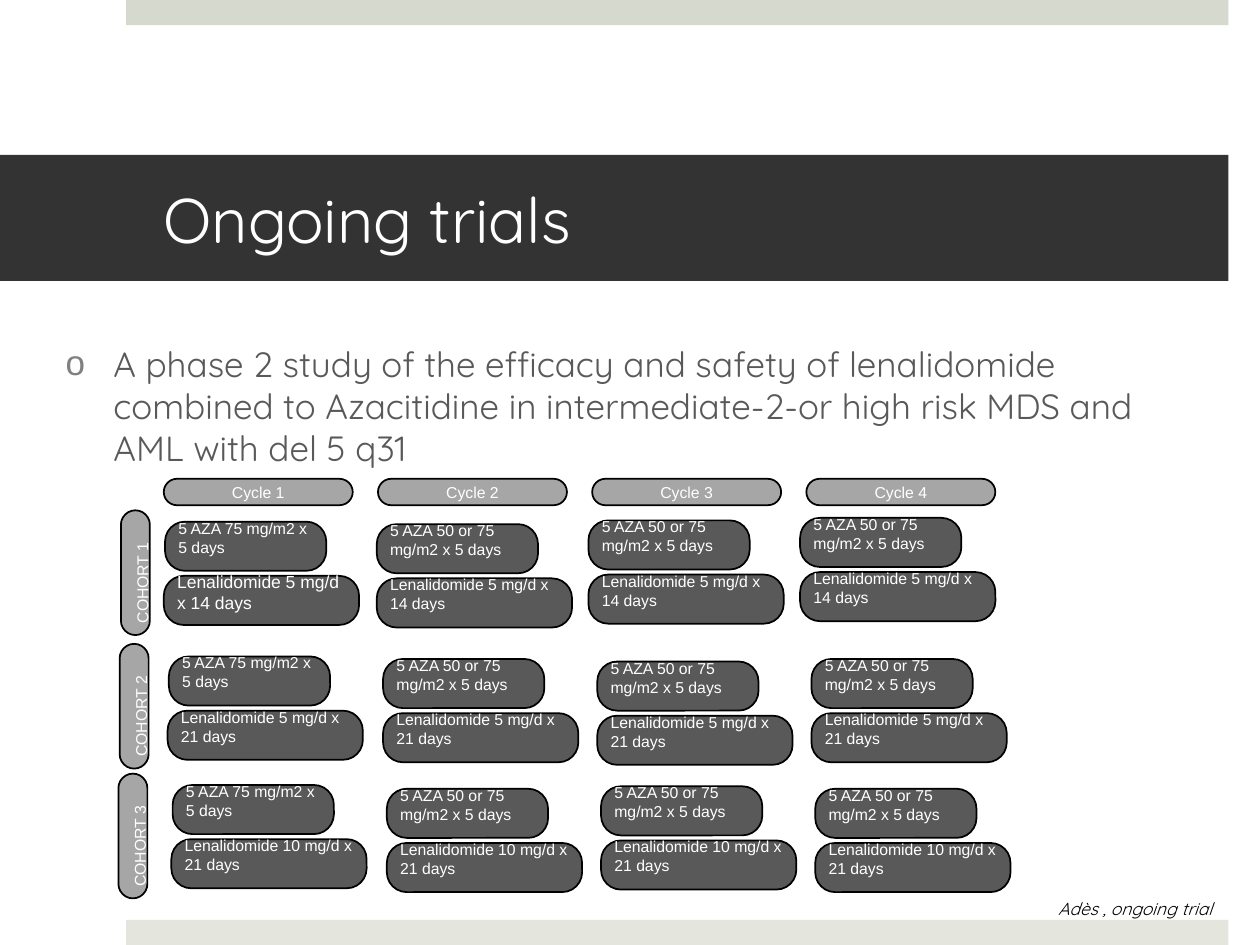
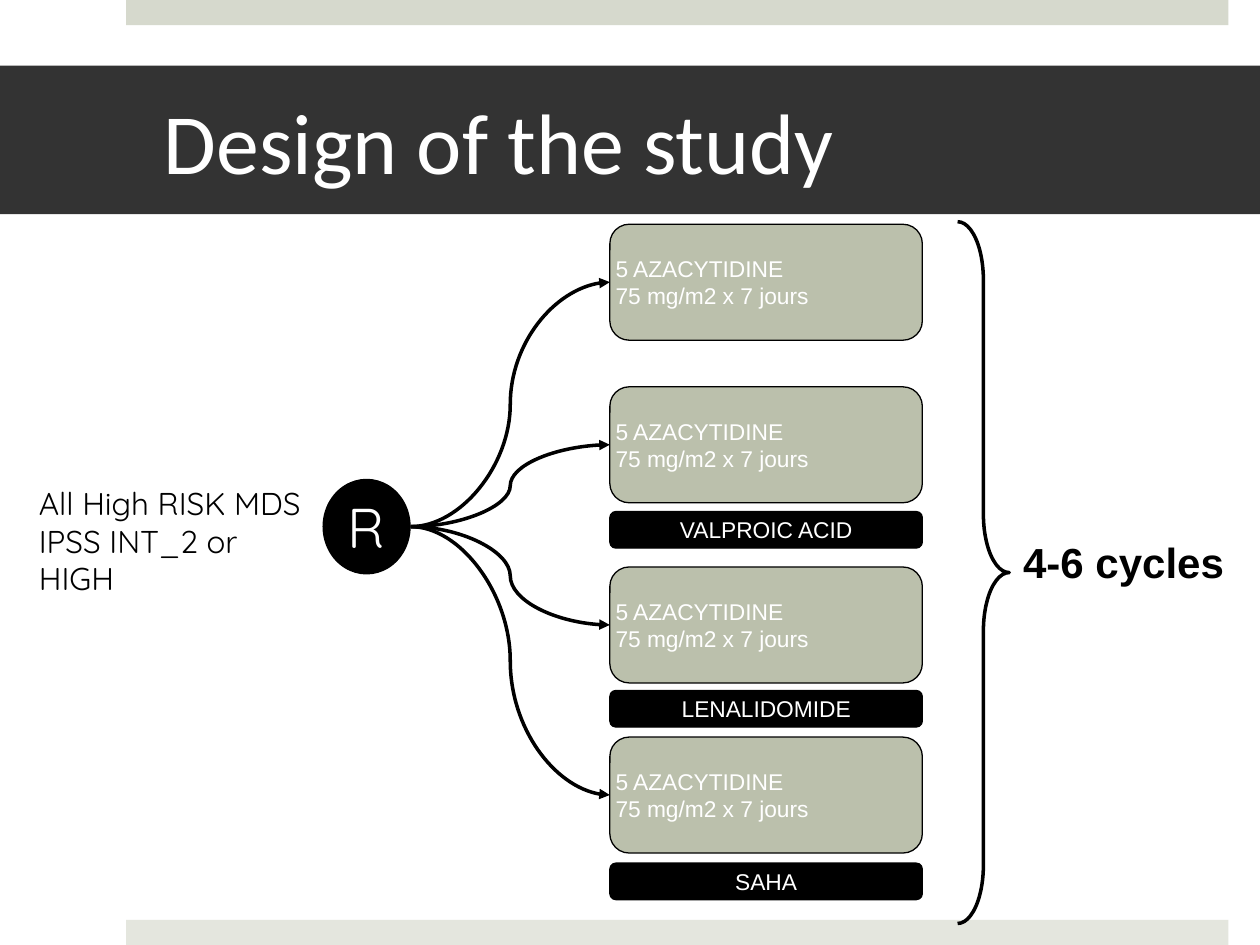
from dataclasses import dataclass

from lxml import etree
from pptx import Presentation
from pptx.dml.color import RGBColor
from pptx.enum.shapes import MSO_CONNECTOR, MSO_SHAPE
from pptx.enum.text import MSO_ANCHOR, MSO_AUTO_SIZE, PP_ALIGN
from pptx.oxml.ns import qn
from pptx.util import Inches, Pt

RECTANGLE = MSO_SHAPE.RECTANGLE
ROUNDED = MSO_SHAPE.ROUNDED_RECTANGLE
OVAL = MSO_SHAPE.OVAL
BRACE = MSO_SHAPE.RIGHT_BRACE
CURVE = MSO_CONNECTOR.CURVE
LEFT, CENTER = PP_ALIGN.LEFT, PP_ALIGN.CENTER
TOP, MIDDLE = MSO_ANCHOR.TOP, MSO_ANCHOR.MIDDLE
NO_AUTOFIT = MSO_AUTO_SIZE.NONE

BLACK = RGBColor(0x00, 0x00, 0x00)
WHITE = RGBColor(0xFF, 0xFF, 0xFF)
CHARCOAL = RGBColor(0x33, 0x33, 0x33)
DARK_GRAY = RGBColor(0x59, 0x59, 0x59)
BULLET_GRAY = RGBColor(0x80, 0x80, 0x80)
LIGHT_GRAY = RGBColor(0xA6, 0xA6, 0xA6)
SAGE = RGBColor(0xBB, 0xC0, 0xAC)
TOP_BAND = RGBColor(0xD6, 0xD9, 0xCD)
BOTTOM_BAND = RGBColor(0xE4, 0xE6, 0xDE)

ARIAL, CALIBRI, QUICKSAND = "Arial", "Calibri", "Quicksand"
DEFAULT_INSETS = (0.1, 0.05, 0.1, 0.05)
PILL_INSETS = (0.06, 0.06, 0.06, 0.06)
DOSE_INSETS = (0.06, 0.06, 0.06, 0.2)
NO_INSETS = (0, 0, 0, 0)


@dataclass(frozen=True)
class Box:
    left: float
    top: float
    width: float
    height: float

    def lengths(self) -> tuple:
        return tuple(Inches(value) for value in (self.left, self.top, self.width, self.height))


@dataclass(frozen=True)
class Cohort:
    label_left: float
    label_top: float
    first_left: float
    pitch: float
    tops: tuple[float, ...]
    lenalidomide: str


@dataclass(frozen=True)
class Arm:
    top: float
    drug: str = ""
    drug_top: float = 0


COHORTS = (
    Cohort(0.58, 4.43, 1.31, 1.68, (4.14, 4.16, 4.13, 4.11), "Lenalidomide 5 mg/d x 14 days"),
    Cohort(0.57, 5.49, 1.34, 1.7, (5.21, 5.23, 5.25, 5.23), "Lenalidomide 5 mg/d x 21 days"),
    Cohort(0.56, 6.52, 1.37, 1.7, (6.23, 6.26, 6.24, 6.26), "Lenalidomide 10 mg/d x 21 days"),
)
ARMS = (
    Arm(1.78),
    Arm(3.07, "VALPROIC ACID", 4.06),
    Arm(4.5, "LENALIDOMIDE", 5.48),
    Arm(5.85, "SAHA", 6.85),
)


def write_text(shape, *lines: str, size: float, font: str = ARIAL, color: RGBColor = WHITE,
               bold: bool = False, italic: bool = False, align=LEFT, anchor=MIDDLE,
               insets: tuple = DEFAULT_INSETS, wrap: bool = True) -> None:
    frame = shape.text_frame
    frame.auto_size = NO_AUTOFIT
    frame.word_wrap = wrap
    frame.vertical_anchor = anchor
    (frame.margin_left, frame.margin_top,
     frame.margin_right, frame.margin_bottom) = (Inches(inset) for inset in insets)
    for index, line in enumerate(lines):
        paragraph = frame.add_paragraph() if index else frame.paragraphs[0]
        paragraph.alignment = align
        run = paragraph.add_run()
        run.text = line
        run.font.size = Pt(size)
        run.font.name = font
        run.font.color.rgb = color
        run.font.bold = bold
        run.font.italic = italic


def add_box(slide, kind, box: Box, fill: RGBColor | None = None,
            line_width: float = 0, adjustment: float | None = None):
    shape = slide.shapes.add_shape(kind, *box.lengths())
    shape.shadow.inherit = False
    if fill is None:
        shape.fill.background()
    else:
        shape.fill.solid()
        shape.fill.fore_color.rgb = fill
    if line_width:
        shape.line.color.rgb = BLACK
        shape.line.width = Pt(line_width)
    else:
        shape.line.fill.background()
    if adjustment is not None:
        shape.adjustments[0] = adjustment
    return shape


def add_label(slide, box: Box, *lines: str, **text_format) -> None:
    write_text(slide.shapes.add_textbox(*box.lengths()), *lines,
               color=BLACK, anchor=TOP, **text_format)


def place(placeholder, box: Box) -> None:
    placeholder.left, placeholder.top, placeholder.width, placeholder.height = box.lengths()


def set_title(slide, text: str, box: Box, size: float, font: str) -> None:
    title = slide.shapes.title
    place(title, box)
    title.fill.solid()
    title.fill.fore_color.rgb = CHARCOAL
    write_text(title, text, size=size, font=font, insets=(1.3, 0.05, 0.3, 0.05))


def add_master_bands(presentation, slide) -> None:
    tree = presentation.slide_master.shapes.element
    for index, (top, color) in enumerate(((0, TOP_BAND), (7.3, BOTTOM_BAND))):
        band = add_box(slide, RECTANGLE, Box(1, top, 8.75, 0.2), color)
        band.element.xpath(".//p:cNvPr")[0].set("id", str(100 + index))
        tree.insert(2 + index, band.element)


def set_bullet(paragraph, character: str, color: RGBColor, indent: float) -> None:
    properties = paragraph._p.get_or_add_pPr()
    properties.set("marL", str(Inches(indent)))
    properties.set("indent", str(-Inches(indent)))
    bullet_color = etree.SubElement(properties, qn("a:buClr"))
    etree.SubElement(bullet_color, qn("a:srgbClr"), val=str(color))
    etree.SubElement(properties, qn("a:buFont"), typeface=ARIAL)
    etree.SubElement(properties, qn("a:buChar"), char=character)


def add_curved_arrow(slide, start: tuple[float, float], end: tuple[float, float]) -> None:
    connector = slide.shapes.add_connector(
        CURVE, *(Inches(value) for value in (*start, *end)))
    connector.line.color.rgb = BLACK
    connector.line.width = Pt(2)
    etree.SubElement(connector.element.xpath(".//a:ln")[0], qn("a:tailEnd"), type="triangle")
    etree.SubElement(connector.element.xpath("./p:spPr")[0], qn("a:effectLst"))


def add_dose(slide, box: Box, text: str, size: float = 9) -> None:
    shape = add_box(slide, ROUNDED, box, DARK_GRAY, 1, 0.405)
    write_text(shape, text, size=size, insets=DOSE_INSETS)


def add_cohort(slide, number: int, cohort: Cohort) -> None:
    label = add_box(slide, ROUNDED, Box(cohort.label_left, cohort.label_top, 0.99, 0.23),
                    LIGHT_GRAY, 1, 0.5)
    label.rotation = 270
    write_text(label, f"COHORT {number}", size=9, anchor=TOP, insets=PILL_INSETS)
    for column, top in enumerate(cohort.tops):
        left = cohort.first_left + column * cohort.pitch
        azacitidine = "50 or 75" if column else "75"
        add_dose(slide, Box(left, top, 1.28, 0.39), f"5 AZA {azacitidine} mg/m2 x 5 days")
        add_dose(slide, Box(left if column else left - 0.01, top + 0.43, 1.55, 0.39),
                 cohort.lenalidomide, 10 if number == 1 and column == 0 else 9)


def build_trials(presentation) -> None:
    slide = presentation.slides.add_slide(presentation.slide_layouts[1])
    add_master_bands(presentation, slide)
    set_title(slide, "Ongoing trials", Box(0, 1.23, 9.75, 1), 36, QUICKSAND)
    body = slide.placeholders[1]
    place(body, Box(0.42, 2.67, 8.92, 4.19))
    write_text(body, "A phase 2 study of the efficacy and safety of lenalidomide combined to "
               "Azacitidine in intermediate-2-or high risk MDS and AML with del 5 q31",
               size=20, font=QUICKSAND, color=DARK_GRAY, anchor=TOP)
    paragraph = body.text_frame.paragraphs[0]
    paragraph.space_before = Pt(20)
    set_bullet(paragraph, "o", BULLET_GRAY, 0.38)
    add_label(slide, Box(8.3, 7.08, 1.53, 0.27), "Adès , ongoing trial",
              size=10, font=QUICKSAND, italic=True)
    for number, cohort in enumerate(COHORTS, 1):
        add_cohort(slide, number, cohort)
    for column in range(4):
        header = add_box(slide, ROUNDED, Box(1.3 + 1.7 * column, 3.8, 1.5, 0.21),
                         LIGHT_GRAY, 1, 0.5)
        write_text(header, f"Cycle {column + 1}", size=9, align=CENTER, insets=PILL_INSETS)


def build_design(presentation) -> None:
    slide = presentation.slides.add_slide(presentation.slide_layouts[5])
    set_title(slide, "Design of the study", Box(0, 0.52, 10, 1.18), 49, CALIBRI)
    arm_left, arm_width, arm_height = 4.84, 2.48, 0.92
    randomisation = add_box(slide, OVAL, Box(2.56, 3.8, 0.7, 0.76), BLACK)
    write_text(randomisation, "R", size=32, font=QUICKSAND, align=CENTER,
               insets=(0.07, 0.04, 0.07, 0.04), wrap=False)
    for arm in ARMS:
        treatment = add_box(slide, ROUNDED, Box(arm_left, arm.top, arm_width, arm_height),
                            SAGE, 0.75)
        write_text(treatment, "5 AZACYTIDINE", "75 mg/m2 x 7 jours", size=13, insets=NO_INSETS)
        if arm.drug:
            drug = add_box(slide, ROUNDED, Box(arm_left, arm.drug_top, arm_width, 0.29),
                           BLACK, 0.75)
            write_text(drug, arm.drug, size=13, align=CENTER, insets=NO_INSETS)
        add_curved_arrow(slide, (3.26, 4.18), (arm_left, arm.top + arm_height / 2))
    add_box(slide, BRACE, Box(7.6, 1.76, 0.41, 5.57), line_width=2, adjustment=1.131)
    add_label(slide, Box(8.05, 4.22, 1.75, 0.47), "4-6 cycles", size=24, bold=True,
              insets=(0.07, 0.04, 0.07, 0.04))
    add_label(slide, Box(0.21, 3.79, 2.35, 0.71), "All High RISK MDS", "IPSS INT_2 or HIGH",
              size=18, font=QUICKSAND)


def main() -> None:
    presentation = Presentation()
    presentation.slide_width = Inches(10)
    presentation.slide_height = Inches(7.5)
    build_trials(presentation)
    build_design(presentation)
    presentation.save("out.pptx")


if __name__ == "__main__":
    main()
